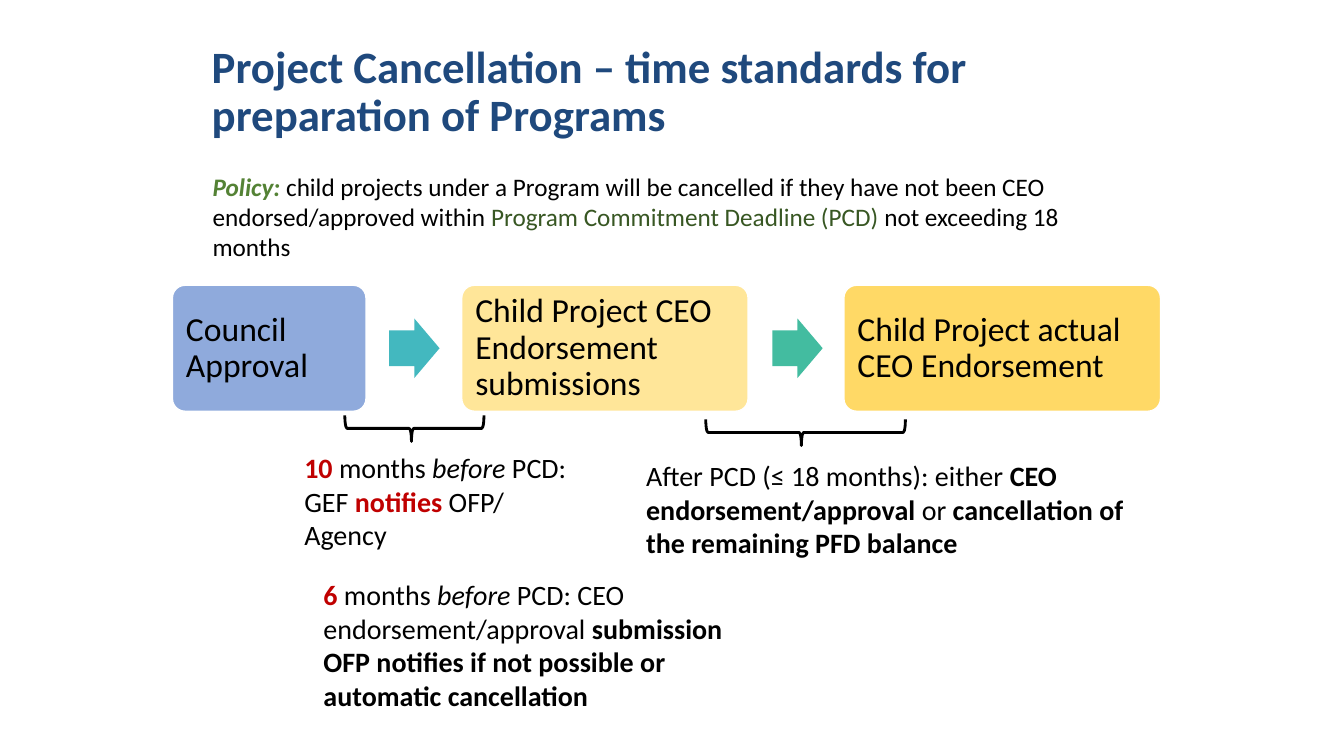
"""Build the slide on time standards for the preparation of Programs."""
from dataclasses import dataclass

from pptx import Presentation
from pptx.dml.color import RGBColor
from pptx.enum.shapes import MSO_SHAPE
from pptx.enum.text import MSO_ANCHOR, MSO_AUTO_SIZE, PP_ALIGN
from pptx.shapes.autoshape import Shape
from pptx.slide import Slide
from pptx.text.text import TextFrame, _Paragraph
from pptx.util import Inches, Pt

ROUNDED = MSO_SHAPE.ROUNDED_RECTANGLE
ARROW = MSO_SHAPE.RIGHT_ARROW
BRACE = MSO_SHAPE.LEFT_BRACE
MIDDLE = MSO_ANCHOR.MIDDLE
LEFT = PP_ALIGN.LEFT
FIXED = MSO_AUTO_SIZE.NONE
GROW = MSO_AUTO_SIZE.SHAPE_TO_FIT_TEXT
TITLE_ONLY = 5


@dataclass(frozen=True)
class Theme:
    """Colours, font and type sizes of the slide."""

    font: str = "Calibri"
    title_size: int = 32
    stage_size: int = 24
    note_size: int = 20
    policy_size: int = 18
    title: str = "1F497D"
    ink: str = "000000"
    paper: str = "FFFFFF"
    alert: str = "C00000"
    policy: str = "548235"
    deadline: str = "385723"
    council: str = "8FAADC"
    submission: str = "FFE699"
    endorsement: str = "FFD966"
    first_arrow: str = "43B8BF"
    second_arrow: str = "43BCA0"


THEME = Theme()


@dataclass(frozen=True)
class Area:
    """A rectangle in inches."""

    left: float
    top: float
    width: float
    height: float


@dataclass(frozen=True)
class Span:
    """A stretch of text in one style."""

    text: str
    color: str = THEME.ink
    bold: bool = False
    italic: bool = False


@dataclass(frozen=True)
class Note:
    """A text box holding paragraphs of spans."""

    area: Area
    size: int
    paragraphs: tuple[tuple[Span, ...], ...]


@dataclass(frozen=True)
class Stage:
    """A rounded box of the process."""

    text: str
    left: float
    width: float
    color: str


@dataclass(frozen=True)
class Arrow:
    """An arrow between two stages."""

    left: float
    color: str


TITLE = "Project Cancellation – time standards for preparation of Programs"
TITLE_AREA = Area(2, 0.2, 8.62, 1.45)
STAGE_TOP, STAGE_HEIGHT = 2.83, 1.25
ARROW_TOP, ARROW_WIDTH, ARROW_HEIGHT = 3.16, 0.5, 0.59

STAGES = (
    Stage("Council Approval", 1.71, 1.92, THEME.council),
    Stage("Child Project CEO Endorsement submissions", 4.58, 2.84, THEME.submission),
    Stage("Child Project actual CEO Endorsement", 8.37, 3.14, THEME.endorsement),
)
ARROWS = (Arrow(3.86, THEME.first_arrow), Arrow(7.66, THEME.second_arrow))
BRACES = (Area(3.98, 3.56, 0.26, 1.38), Area(7.86, 3.3, 0.26, 1.98))
NOTES = (
    Note(Area(2.01, 1.65, 8.91, 1.01), THEME.policy_size, ((
        Span("Policy: ", THEME.policy, bold=True, italic=True),
        Span("child projects under a Program will be cancelled if they have "
             "not been CEO endorsed/approved within "),
        Span("Program Commitment Deadline (PCD)", THEME.deadline),
        Span(" not exceeding 18 months"),
    ),)),
    Note(Area(2.92, 4.42, 3, 1.11), THEME.note_size, ((
        Span("10 ", THEME.alert, bold=True),
        Span("months "),
        Span("before", italic=True),
        Span(" PCD: GEF "),
        Span("notifies", THEME.alert, bold=True),
        Span(" OFP/ Agency"),
    ),)),
    Note(Area(3.11, 5.68, 4.64, 1.45), THEME.note_size, (
        (
            Span("6", THEME.alert, bold=True),
            Span(" months "),
            Span("before", italic=True),
            Span(" PCD: CEO endorsement/approval "),
            Span("submission", bold=True),
        ),
        (Span("OFP notifies if not possible or automatic cancellation", bold=True),),
    )),
    Note(Area(6.31, 4.5, 5, 1.11), THEME.note_size, ((
        Span("After PCD (≤ 18 months): either "),
        Span("CEO endorsement/approval ", bold=True),
        Span("or "),
        Span("cancellation of the remaining PFD balance", bold=True),
    ),)),
)


def lengths(area: Area) -> tuple[Inches, Inches, Inches, Inches]:
    """Return the area as slide lengths."""
    return Inches(area.left), Inches(area.top), Inches(area.width), Inches(area.height)


def write_spans(para: _Paragraph, spans: tuple[Span, ...], size: int) -> None:
    """Write styled spans into a paragraph."""
    for span in spans:
        run = para.add_run()
        run.text = span.text
        run.font.name = THEME.font
        run.font.size = Pt(size)
        run.font.bold = span.bold
        run.font.italic = span.italic
        run.font.color.rgb = RGBColor.from_string(span.color)


def write_label(frame: TextFrame, span: Span, size: int) -> None:
    """Write one left-aligned, vertically centred label."""
    frame.word_wrap = True
    frame.auto_size = FIXED
    frame.vertical_anchor = MIDDLE
    para = frame.paragraphs[0]
    para.alignment = LEFT
    para.line_spacing = 0.9
    write_spans(para, (span,), size)


def add_title(page: Slide) -> None:
    """Place and fill the title placeholder."""
    title = page.shapes.title
    title.left, title.top, title.width, title.height = lengths(TITLE_AREA)
    write_label(title.text_frame, Span(TITLE, THEME.title, bold=True), THEME.title_size)


def add_note(page: Slide, note: Note) -> None:
    """Add a text box with mixed styles."""
    frame = page.shapes.add_textbox(*lengths(note.area)).text_frame
    frame.word_wrap = True
    frame.auto_size = GROW
    for index, spans in enumerate(note.paragraphs):
        para = frame.add_paragraph() if index else frame.paragraphs[0]
        write_spans(para, spans, note.size)


def add_filled(page: Slide, kind: MSO_SHAPE, area: Area, color: str) -> Shape:
    """Add a filled shape without shadow or outline."""
    shape = page.shapes.add_shape(kind, *lengths(area))
    shape.shadow.inherit = False
    shape.fill.solid()
    shape.fill.fore_color.rgb = RGBColor.from_string(color)
    shape.line.fill.background()
    return shape


def add_stage(page: Slide, stage: Stage) -> None:
    """Add a stage of the process."""
    area = Area(stage.left, STAGE_TOP, stage.width, STAGE_HEIGHT)
    box = add_filled(page, ROUNDED, area, stage.color)
    box.adjustments[0] = 0.1
    box.line.color.rgb = RGBColor.from_string(THEME.paper)
    box.line.width = Pt(1)
    frame = box.text_frame
    frame.margin_left = frame.margin_right = Inches(0.1)
    write_label(frame, Span(stage.text), THEME.stage_size)


def add_arrow(page: Slide, arrow: Arrow) -> None:
    """Add an arrow between stages."""
    area = Area(arrow.left, ARROW_TOP, ARROW_WIDTH, ARROW_HEIGHT)
    add_filled(page, ARROW, area, arrow.color).adjustments[0] = 0.6


def add_brace(page: Slide, area: Area) -> None:
    """Add a brace turned to point down."""
    brace = page.shapes.add_shape(BRACE, *lengths(area))
    brace.shadow.inherit = False
    brace.rotation = 270
    brace.adjustments[0], brace.adjustments[1] = 0.083, 0.479
    brace.fill.background()
    brace.line.color.rgb = RGBColor.from_string(THEME.ink)
    brace.line.width = Pt(2)


def main() -> None:
    """Build and save the deck."""
    deck = Presentation()
    deck.slide_width, deck.slide_height = Inches(13.33), Inches(7.5)
    page = deck.slides.add_slide(deck.slide_layouts[TITLE_ONLY])
    add_title(page)
    for note in NOTES:
        add_note(page, note)
    for area in BRACES:
        add_brace(page, area)
    for stage in STAGES:
        add_stage(page, stage)
    for arrow in ARROWS:
        add_arrow(page, arrow)
    deck.save("out.pptx")


if __name__ == "__main__":
    main()
